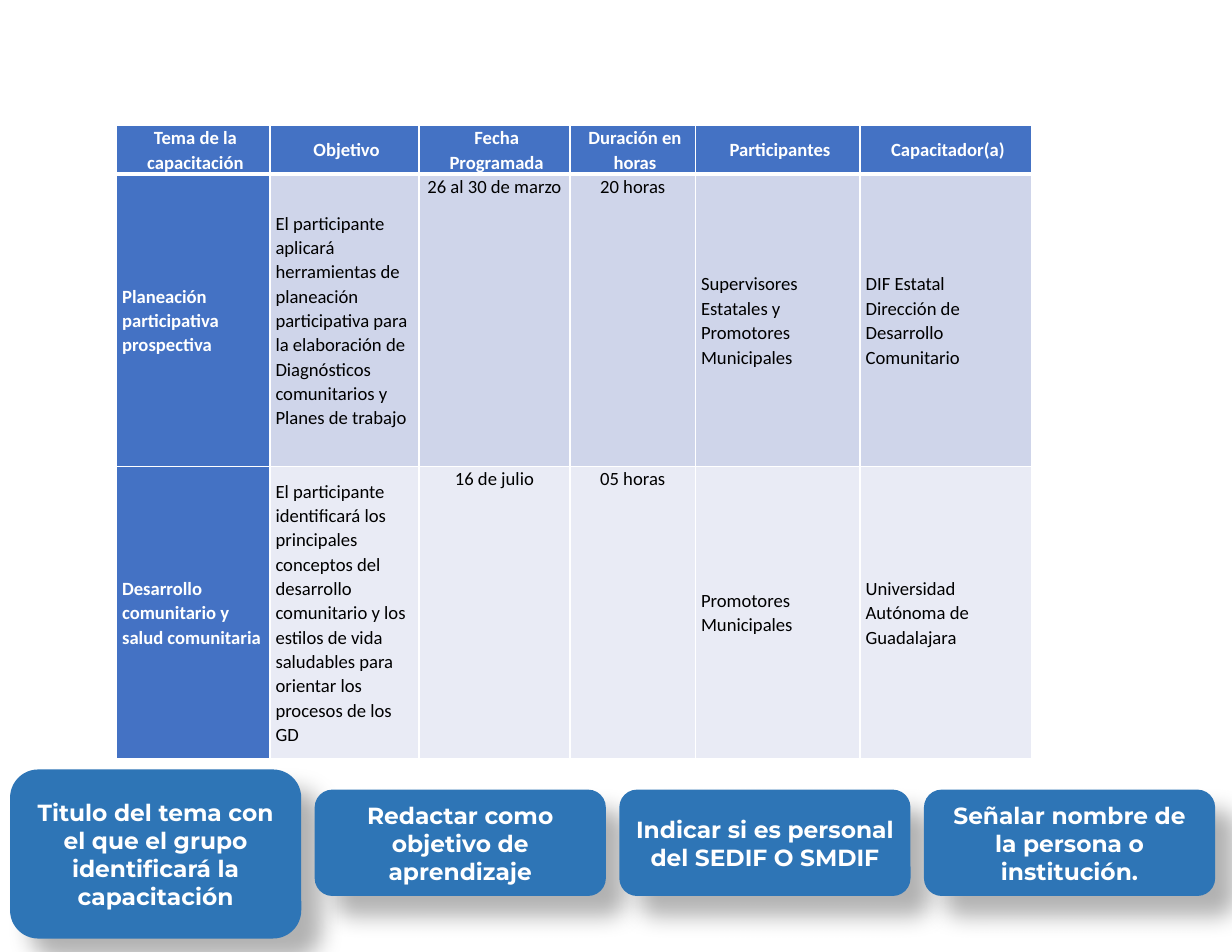
from dataclasses import dataclass

from lxml import etree
from pptx import Presentation
from pptx.dml.color import RGBColor
from pptx.enum import shapes, text
from pptx.oxml import ns
from pptx.util import Inches, Pt

WHITE = RGBColor(0xFF, 0xFF, 0xFF)
BLACK = RGBColor(0, 0, 0)
HEADER_BLUE = RGBColor(0x44, 0x72, 0xC4)
NOTE_BLUE = RGBColor(0x2E, 0x75, 0xB6)
BANDS = [RGBColor(0xCF, 0xD5, 0xEA), RGBColor(0xE9, 0xEB, 0xF5)]

COLUMN_WIDTHS = [1.37, 1.33, 1.35, 1.12, 1.47, 1.53]
ROW_HEIGHTS = [0.43, 2.61, 2.61]
CENTERED_COLUMNS = (2, 3)  # date and duration
DURATION_COLUMN = 3
ROWS = [
    ["Tema de la capacitación", "Objetivo", "Fecha Programada",
     "Duración en horas", "Participantes", "Capacitador(a)"],
    ["Planeación participativa prospectiva",
     "El participante aplicará herramientas de planeación participativa para "
     "la elaboración de Diagnósticos comunitarios y Planes de trabajo",
     "26 al 30 de marzo", "20 horas",
     "Supervisores Estatales y Promotores Municipales",
     "DIF Estatal\nDirección de Desarrollo Comunitario"],
    ["Desarrollo comunitario y salud comunitaria",
     "El participante identificará los principales conceptos del desarrollo "
     "comunitario y los estilos de vida saludables para orientar los procesos "
     "de los GD",
     "16 de julio", "05 horas", "Promotores Municipales",
     "Universidad Autónoma de Guadalajara"],
]


@dataclass
class Note:
    label: str
    top: float = 7.05
    height: float = 0.95


NOTES = [
    Note("Titulo del tema con el que el grupo identificará la capacitación", 6.87, 1.51),
    Note("Redactar como objetivo de aprendizaje"),
    Note("Indicar si es personal del SEDIF O SMDIF"),
    Note("Señalar nombre de la persona o institución."),
]
NOTE_LEFT, NOTE_STEP, NOTE_WIDTH = 0.09, 2.72, 2.6


def add_span(para, words: str, font: str, size: float, color: RGBColor, bold: bool) -> None:
    span = para.add_run()
    span.text = words
    span.font.name = font
    span.font.size = Pt(size)
    span.font.bold = bold
    span.font.color.rgb = color


def set_borders(cell, bottom: float) -> None:
    properties = cell._tc.get_or_add_tcPr()
    for side, width in (("L", 1), ("R", 1), ("T", 1), ("B", bottom)):
        line = etree.SubElement(properties, ns.qn(f"a:ln{side}"), w=str(Pt(width)))
        fill = etree.SubElement(line, ns.qn("a:solidFill"))
        etree.SubElement(fill, ns.qn("a:srgbClr"), val=str(WHITE))


def fill_cell(cell, words: str, row: int, column: int) -> None:
    header = row == 0
    strong = header or column == 0
    set_borders(cell, 3 if header else 1)
    cell.fill.solid()
    cell.fill.fore_color.rgb = HEADER_BLUE if strong else BANDS[row - 1]
    cell.margin_left = cell.margin_right = Inches(0.05)
    cell.margin_top = cell.margin_bottom = 0
    at_top = column == DURATION_COLUMN if header else column in CENTERED_COLUMNS
    cell.vertical_anchor = text.MSO_ANCHOR.TOP if at_top else text.MSO_ANCHOR.MIDDLE
    centered = header or column in CENTERED_COLUMNS
    frame = cell.text_frame
    for index, line in enumerate(words.split("\n")):
        para = frame.add_paragraph() if index else frame.paragraphs[0]
        para.alignment = text.PP_ALIGN.CENTER if centered else text.PP_ALIGN.LEFT
        para.line_spacing = 1.07
        if header:
            para._p.get_or_add_pPr().set("marL", str(Inches(0.04)))
        add_span(para, line, "Calibri", 12, WHITE if strong else BLACK, strong)


def add_training_table(page) -> None:
    table = page.shapes.add_table(
        len(ROWS), len(COLUMN_WIDTHS), Inches(1.04), Inches(1.12),
        Inches(sum(COLUMN_WIDTHS)), Inches(sum(ROW_HEIGHTS))).table
    for column, width in zip(table.columns, COLUMN_WIDTHS):
        column.width = Inches(width)
    for row, height in zip(table.rows, ROW_HEIGHTS):
        row.height = Inches(height)
    for row, values in enumerate(ROWS):
        for column, words in enumerate(values):
            fill_cell(table.cell(row, column), words, row, column)


def add_shadow(box) -> None:
    box.shadow.inherit = False
    effects = box._element.spPr.find(ns.qn("a:effectLst"))
    shadow = etree.SubElement(
        effects, ns.qn("a:outerShdw"), blurRad=str(Pt(15)), dist=str(Pt(18)),
        dir=str(45 * 60000), algn="tl", rotWithShape="0")
    color = etree.SubElement(shadow, ns.qn("a:srgbClr"), val=str(BLACK))
    etree.SubElement(color, ns.qn("a:alpha"), val="30000")


def add_note(page, note: Note, left: float) -> None:
    box = page.shapes.add_shape(
        shapes.MSO_SHAPE.ROUNDED_RECTANGLE, Inches(left), Inches(note.top),
        Inches(NOTE_WIDTH), Inches(note.height))
    box.fill.solid()
    box.fill.fore_color.rgb = NOTE_BLUE
    box.line.fill.background()
    add_shadow(box)
    frame = box.text_frame
    frame.word_wrap = True
    frame.auto_size = text.MSO_AUTO_SIZE.SHAPE_TO_FIT_TEXT
    frame.vertical_anchor = text.MSO_ANCHOR.MIDDLE
    para = frame.paragraphs[0]
    para.alignment = text.PP_ALIGN.CENTER
    add_span(para, note.label, "Montserrat", 15, WHITE, True)


def main() -> None:
    deck = Presentation()
    deck.slide_width, deck.slide_height = Inches(11), Inches(8.5)
    page = deck.slides.add_slide(deck.slide_layouts[6])

    # Training schedule
    add_training_table(page)

    # Filling-in hints along the bottom
    for index, note in enumerate(NOTES):
        add_note(page, note, NOTE_LEFT + index * NOTE_STEP)

    deck.save("out.pptx")


if __name__ == "__main__":
    main()
